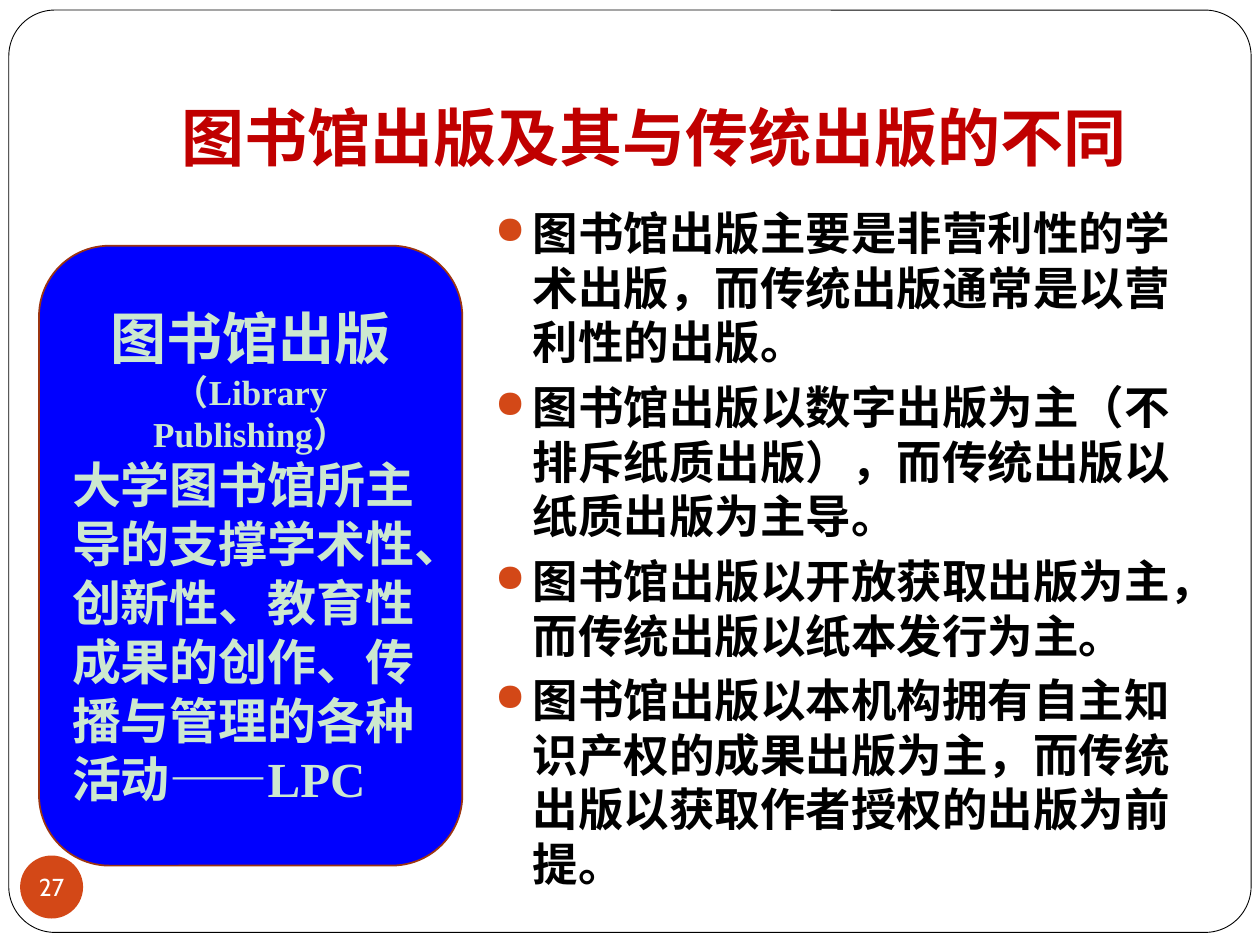
from lxml import etree
from pptx import Presentation
from pptx.dml.color import RGBColor
from pptx.enum import lang, shapes, text
from pptx.oxml.ns import qn
from pptx.util import Inches, Pt

COLORS = {
    "white": "FFFFFF", "black": "000000", "mint": "CCE8CF", "title": "C00000",
    "accent": "D34817", "rust": "9C3511", "blue": "0000FF",
}
SANS, SERIF = "Cabin", "Times New Roman"
POINTS = [
    "图书馆出版主要是非营利性的学术出版，而传统出版通常是以营利性的出版。",
    "图书馆出版以数字出版为主（不排斥纸质出版），而传统出版以纸质出版为主导。",
    "图书馆出版以开放获取出版为主，而传统出版以纸本发行为主。",
    "图书馆出版以本机构拥有自主知识产权的成果出版为主，而传统出版以获取作者授权的出版为前提。",
]
DEFINITION = "大学图书馆所主导的支撑学术性、创新性、教育性成果的创作、传播与管理的各种活动——LPC"


def rgb(name):
    return RGBColor.from_string(COLORS[name])


class Deck:
    """Holds the presentation, its style and the current slide."""

    def __init__(self):
        self.prs = Presentation()
        self.prs.slide_width, self.prs.slide_height = Inches(10), Inches(7.5)
        self.s = self.prs.slides.add_slide(self.prs.slide_layouts[6])

    def background(self, color):
        fill = self.s.background.fill
        fill.solid()
        fill.fore_color.rgb = rgb(color)

    def shape(self, kind, box, fill, line=None, width=1, adj=None):
        sp = self.s.shapes.add_shape(kind, *map(Inches, box))
        sp.shadow.inherit = False
        sp.fill.solid()
        sp.fill.fore_color.rgb = rgb(fill)
        if line:
            sp.line.color.rgb = rgb(line)
            sp.line.width = Pt(width)
        else:
            sp.line.fill.background()
        if adj is not None:
            sp.adjustments[0] = adj
        return sp

    def textbox(self, box):
        return self.s.shapes.add_textbox(*map(Inches, box))

    def frame(self, sp, anchor, insets=(0.1, 0.05, 0.1, 0.05), wrap=True):
        """Set up the text frame; insets run left, top, right, bottom."""
        tf = sp.text_frame
        tf.word_wrap, tf.vertical_anchor = wrap, anchor
        (tf.margin_left, tf.margin_top,
         tf.margin_right, tf.margin_bottom) = map(Inches, insets)
        return tf

    def paragraph(self, tf, align=text.PP_ALIGN.LEFT):
        p = tf.paragraphs[0]
        if p.runs:
            p = tf.add_paragraph()
        p.alignment = align
        return p

    def run(self, p, words, size, font, color, bold=True):
        r = p.add_run()
        r.text = words
        r.font.size, r.font.name, r.font.bold = Pt(size), font, bold
        r.font.color.rgb = rgb(color)
        r.font.language_id = lang.MSO_LANGUAGE_ID.SIMPLIFIED_CHINESE

    def bullet(self, p, indent=0.3):
        pPr = p._p.get_or_add_pPr()
        pPr.set("marL", str(Inches(indent)))
        pPr.set("indent", str(Inches(-indent)))
        color = etree.SubElement(pPr, qn("a:buClr"))
        etree.SubElement(color, qn("a:srgbClr"), val=COLORS["accent"])
        etree.SubElement(pPr, qn("a:buSzPct"), val="85000")
        etree.SubElement(pPr, qn("a:buChar"), char="●")


def main():
    deck = Deck()
    kinds, center = shapes.MSO_SHAPE, text.PP_ALIGN.CENTER
    anchors = text.MSO_ANCHOR

    deck.background("mint")
    deck.shape(kinds.RECTANGLE, (0, 0, 10, 7.5), "white")
    deck.shape(kinds.ROUNDED_RECTANGLE, (0.07, 0.08, 9.86, 7.32),
               "white", "black", 0.5, adj=0.05)

    title = deck.textbox((0.94, 0.23, 8.5, 1.25))
    tf = deck.frame(title, anchors.BOTTOM, (0.1, 0.05, 0.1, 0.1))
    deck.run(deck.paragraph(tf, center), "图书馆出版及其与传统出版的不同",
             36, SANS, "title")

    body = deck.textbox((3.83, 1.58, 5.67, 5))
    tf = deck.frame(body, anchors.TOP)
    for i, point in enumerate(POINTS):
        p = deck.paragraph(tf)
        p.space_before = Pt(5.8 if i else 0)
        deck.bullet(p)
        deck.run(p, point, 26, SERIF, "black")

    badge = deck.shape(kinds.OVAL, (0.16, 6.79, 0.5, 0.5), "accent")
    tf = deck.frame(badge, anchors.MIDDLE, (0, 0, 0, 0), wrap=False)
    deck.run(deck.paragraph(tf, center), "27", 14, SANS, "white", bold=False)

    card = deck.shape(kinds.ROUNDED_RECTANGLE, (0.31, 1.95, 3.36, 4.92),
                      "blue", "rust")
    tf = deck.frame(card, anchors.MIDDLE)
    p = deck.paragraph(tf, center)
    deck.run(p, "图书馆出版", 32, SERIF, "mint")
    deck.run(p, "（Library Publishing）", 20, SERIF, "mint")
    deck.run(deck.paragraph(tf), DEFINITION, 28, SERIF, "mint")

    deck.prs.save("out.pptx")


if __name__ == "__main__":
    main()
